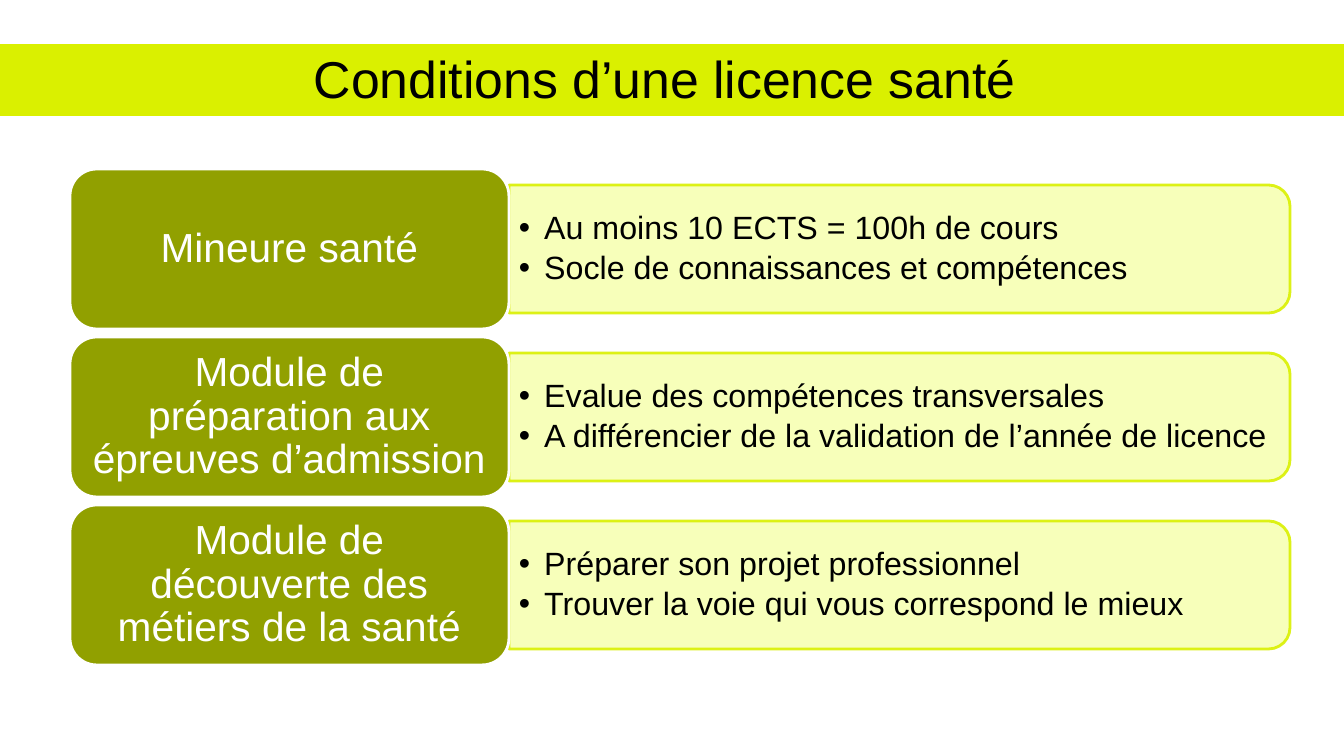
from lxml.etree import SubElement
from pptx import Presentation
from pptx.dml.color import RGBColor
from pptx.enum.shapes import MSO_SHAPE
from pptx.enum.text import MSO_ANCHOR, MSO_AUTO_SIZE, PP_ALIGN
from pptx.oxml.ns import qn
from pptx.util import Emu, Pt

TITLE = "Conditions d’une licence santé "
CONDITIONS = [
    ("Mineure santé",
     ["Au moins 10 ECTS = 100h de cours",
      "Socle de connaissances et compétences"]),
    ("Module de préparation aux épreuves d’admission",
     ["Evalue des compétences transversales",
      "A différencier de la validation de l’année de licence"]),
    ("Module de découverte des métiers de la santé",
     ["Préparer son projet professionnel",
      "Trouver la voie qui vous correspond le mieux"]),
]
FONT = "Arial"
LIME, PALE, OLIVE = "DAF000", "F7FFB3", "91A000"
BLACK, WHITE = "000000", "FFFFFF"
SLIDE_WIDTH, SLIDE_HEIGHT = 1344, 756
BAND_TOP, BAND_HEIGHT = 44, 72
LABEL_LEFT, LABEL_WIDTH, LABEL_HEIGHT = 70, 439, 160
PANEL_LEFT, PANEL_WIDTH, PANEL_HEIGHT = 509, 781, 128
DETAIL_WIDTH, DETAIL_HEIGHT = 775, 116
FIRST_CENTER, ROW_PITCH = 249, 168
CORNER = 0.167


def px(length):
    return Emu(round(length * 12192000 / SLIDE_WIDTH))


def box(left, top, width, height):
    return [px(length) for length in (left, top, width, height)]


def color(value):
    return RGBColor.from_string(value)


def style_shape(shape, fill, line):
    shape.shadow.inherit = False
    shape.fill.solid()
    shape.fill.fore_color.rgb = color(fill)
    shape.line.color.rgb = color(line)
    shape.line.width = Pt(2)


def set_margins(text_frame, horizontal, vertical):
    text_frame.word_wrap = True
    text_frame.vertical_anchor = MSO_ANCHOR.MIDDLE
    text_frame.margin_left = text_frame.margin_right = px(horizontal)
    text_frame.margin_top = text_frame.margin_bottom = px(vertical)


def style_paragraph(paragraph, size, font_color, alignment, spacing=0.9):
    paragraph.alignment = alignment
    paragraph.line_spacing = spacing
    for run in paragraph.runs:
        run.font.name = FONT
        run.font.size = Pt(size)
        run.font.color.rgb = color(font_color)


def add_bullet(paragraph):
    properties = paragraph._p.get_or_add_pPr()
    properties.set("marL", "228600")
    properties.set("indent", "-228600")
    bullet_color = SubElement(properties, qn("a:buClr"))
    SubElement(bullet_color, qn("a:srgbClr"), val=BLACK)
    SubElement(properties, qn("a:buFont"), typeface=FONT)
    SubElement(properties, qn("a:buChar"), char="•")


def add_title(slide):
    title = slide.shapes.title
    title.left, title.top, title.width, title.height = box(
        0, BAND_TOP, SLIDE_WIDTH, BAND_HEIGHT)
    title.fill.solid()
    title.fill.fore_color.rgb = color(LIME)
    title.text_frame.text = TITLE
    title.text_frame.auto_size = MSO_AUTO_SIZE.NONE
    set_margins(title.text_frame, 10, 5)
    style_paragraph(title.text_frame.paragraphs[0], 37, BLACK, PP_ALIGN.CENTER, 0.99)


def add_panel(slide, center):
    left = PANEL_LEFT + (PANEL_WIDTH - PANEL_HEIGHT) / 2
    panel = slide.shapes.add_shape(
        MSO_SHAPE.ROUND_2_SAME_RECTANGLE,
        *box(left, center - PANEL_WIDTH / 2, PANEL_HEIGHT, PANEL_WIDTH))
    panel.rotation = 90
    panel.adjustments[0] = CORNER
    panel.adjustments[1] = 0
    style_shape(panel, PALE, LIME)
    for paint in panel._element.spPr.iter(qn("a:srgbClr")):
        SubElement(paint, qn("a:alpha"), val="90000")


def add_details(slide, center, details):
    text_box = slide.shapes.add_textbox(
        *box(PANEL_LEFT, center - DETAIL_HEIGHT / 2, DETAIL_WIDTH, DETAIL_HEIGHT))
    text_frame = text_box.text_frame
    text_frame.text = "\n".join(details)
    set_margins(text_frame, 10, 5)
    for index, paragraph in enumerate(text_frame.paragraphs):
        paragraph.level = 1
        style_paragraph(paragraph, 23, BLACK, PP_ALIGN.LEFT)
        paragraph.space_before = Pt(3.5 if index else 0)
        add_bullet(paragraph)


def add_label(slide, center, text):
    label = slide.shapes.add_shape(
        MSO_SHAPE.ROUNDED_RECTANGLE,
        *box(LABEL_LEFT, center - LABEL_HEIGHT / 2, LABEL_WIDTH, LABEL_HEIGHT))
    label.adjustments[0] = CORNER
    style_shape(label, OLIVE, WHITE)
    label.text_frame.text = text
    set_margins(label.text_frame, 12, 6)
    style_paragraph(label.text_frame.paragraphs[0], 29, WHITE, PP_ALIGN.CENTER)


def main():
    """Build the slide on the conditions of a health degree."""
    presentation = Presentation()
    presentation.slide_width = px(SLIDE_WIDTH)
    presentation.slide_height = px(SLIDE_HEIGHT)
    slide = presentation.slides.add_slide(presentation.slide_layouts[5])
    add_title(slide)
    for row, (label, details) in enumerate(CONDITIONS):
        center = FIRST_CENTER + row * ROW_PITCH
        add_panel(slide, center)
        add_details(slide, center, details)
        add_label(slide, center, label)
    presentation.save("out.pptx")


if __name__ == "__main__":
    main()
